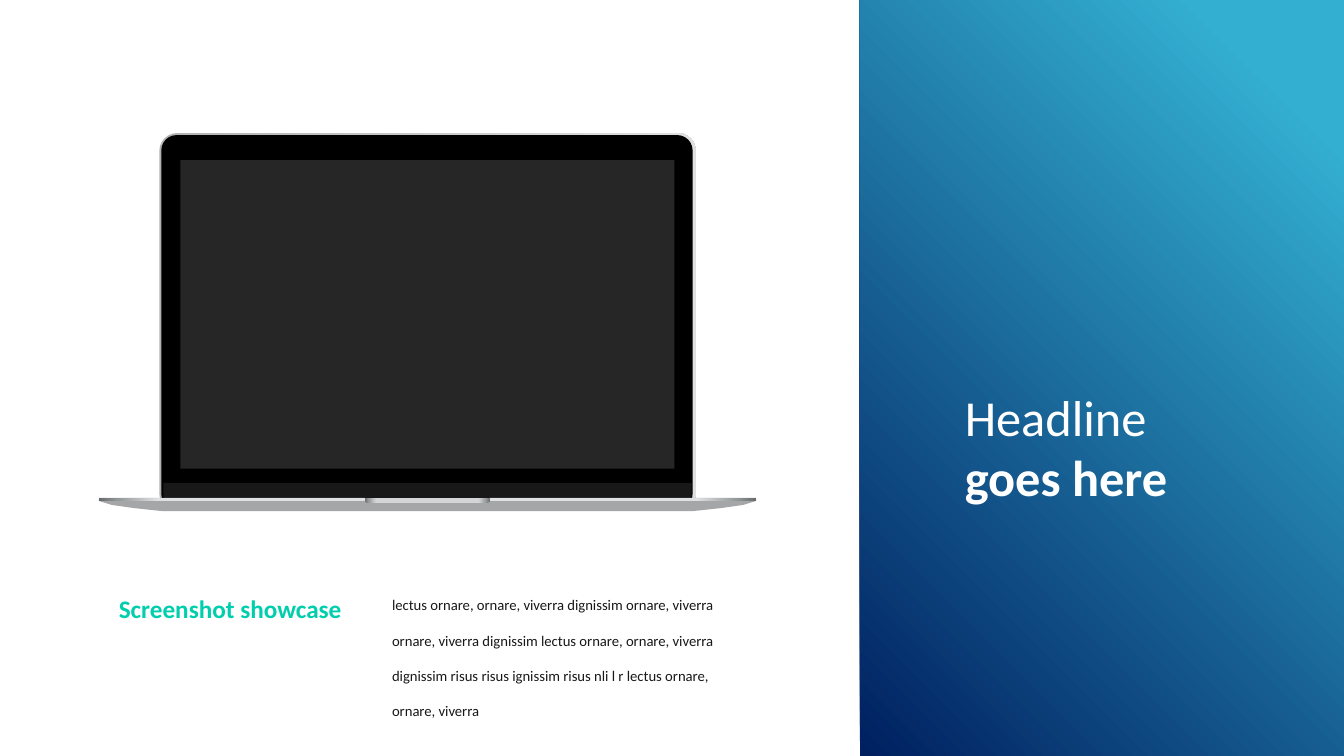
"""Build a laptop showcase slide with a gradient headline panel."""
from dataclasses import dataclass

from lxml.etree import SubElement
from pptx import Presentation
from pptx.dml.color import RGBColor
from pptx.enum.shapes import MSO_SHAPE as SHAPE
from pptx.enum.text import MSO_AUTO_SIZE as AUTO
from pptx.oxml.ns import qn
from pptx.util import Inches, Pt


@dataclass(frozen=True)
class Theme:
    font: str = "Calibri"
    headline_size: float = 36
    title_size: float = 18
    body_size: float = 10.5
    white: str = "FFFFFF"
    accent: str = "00CEAD"
    ink: str = "181818"
    bezel: str = "000000"
    screen: str = "262626"
    base: str = "A5A6A8"
    panel: tuple = ((12, "33AFD2"), (100, "002060"))
    lid: tuple = ((0, "B0B2B4"), (100, "DFE0E1"))


THEME = Theme()
LAPTOP_CENTER = 4.24


def metal(shine):
    """Return symmetric metal gradient stops around a shine colour."""
    edge = ((0, "686B6C"), (3, "96999A"), (9, shine))
    return edge + tuple((100 - pos, color) for pos, color in reversed(edge))


def set_gradient(sp, stops, corner=False):
    """Fill left to right, or outwards from the top right corner."""
    sp.fill.gradient()
    grad = sp._element.spPr.find(qn("a:gradFill"))
    for child in list(grad):
        grad.remove(child)
    stop_list = SubElement(grad, qn("a:gsLst"))
    for pos, color in stops:
        stop = SubElement(stop_list, qn("a:gs"), pos=str(pos * 1000))
        SubElement(stop, qn("a:srgbClr"), val=color)
    if corner:
        path = SubElement(grad, qn("a:path"), path="circle")
        SubElement(path, qn("a:fillToRect"), l="100000", b="100000")
    else:
        SubElement(grad, qn("a:lin"), ang="0", scaled="0")


def paint(sp, fill, corner=False):
    """Apply a plain colour or gradient stops, without line or shadow."""
    if isinstance(fill, str):
        sp.fill.solid()
        sp.fill.fore_color.rgb = RGBColor.from_string(fill)
    else:
        set_gradient(sp, fill, corner)
    sp.line.fill.background()
    sp.shadow.inherit = False


def add_block(shapes, kind, box, fill, adjustments=(), corner=False):
    """Add a painted preset shape."""
    sp = shapes.add_shape(kind, *map(Inches, box))
    for i, value in enumerate(adjustments):
        sp.adjustments[i] = value
    paint(sp, fill, corner)


def add_mirrored(shapes, left_half, fill):
    """Add an outline from its left half, mirrored about the laptop centre."""
    right_half = [(2 * LAPTOP_CENTER - x, y) for x, y in reversed(left_half)]
    points = [(Inches(x), Inches(y)) for x, y in left_half + right_half]
    builder = shapes.build_freeform(*points[0])
    builder.add_line_segments(points[1:], close=True)
    paint(builder.convert_to_shape(), fill)


def add_text(shapes, box, lines, size, color, spacing=None):
    """Add a text box from (text, bold) lines."""
    tf = shapes.add_textbox(*map(Inches, box)).text_frame
    tf.word_wrap = True
    tf.auto_size = AUTO.SHAPE_TO_FIT_TEXT
    tf.text = "\n".join(text for text, _ in lines)
    for p, (_, bold) in zip(tf.paragraphs, lines):
        p.line_spacing = spacing
        font = p.runs[0].font
        font.name, font.size, font.bold = THEME.font, Pt(size), bold
        font.color.rgb = RGBColor.from_string(color)


def add_laptop(slide):
    """Add the laptop as a group of lid, screen and base parts."""
    shapes = slide.shapes.add_group_shape().shapes
    add_block(shapes, SHAPE.ROUNDED_RECTANGLE, (1.58, 1.32, 5.32, 3.75), THEME.lid, (0.047,))
    add_block(shapes, SHAPE.ROUNDED_RECTANGLE, (1.6, 1.34, 5.27, 3.71), THEME.bezel, (0.041,))
    add_block(shapes, SHAPE.ROUND_2_SAME_RECTANGLE, (1.62, 4.79, 5.24, 0.24), THEME.ink, (0, 0.5))
    add_block(shapes, SHAPE.RECTANGLE, (1.79, 1.59, 4.9, 3.06), THEME.screen)
    add_mirrored(shapes, [
        (3.69, 4.97), (3.62, 4.94), (0.98, 4.94), (0.98, 4.97), (1.11, 5.01),
        (1.32, 5.04), (1.6, 5.07), (1.79, 5.07)], THEME.base)
    add_mirrored(shapes, [
        (3.65, 4.96), (3.62, 4.94), (0.98, 4.94), (0.98, 4.97)], metal("DFE0E1"))
    add_mirrored(shapes, [
        (3.62, 4.94), (3.62, 4.97), (3.65, 4.99), (3.69, 4.99)], metal("D3D5D6"))


def main():
    """Build and save the slide."""
    prs = Presentation()
    prs.slide_width, prs.slide_height = Inches(13.33), Inches(7.5)
    slide = prs.slides.add_slide(prs.slide_layouts[6])
    shapes = slide.shapes
    add_block(shapes, SHAPE.RECTANGLE, (8.53, 0, 4.8, 7.5), THEME.panel, corner=True)
    add_text(shapes, (9.47, 3.78, 2.88, 1.31), [("Headline", False), ("goes here", True)],
             THEME.headline_size, THEME.white)
    add_laptop(slide)
    body = ("lectus ornare, ornare, viverra dignissim ornare, viverra ornare, viverra "
            "dignissim lectus ornare, ornare, viverra dignissim risus risus ignissim "
            "risus nli l r lectus ornare, ornare, viverra")
    add_text(shapes, (3.79, 5.69, 3.8, 1.12), [(body, False)],
             THEME.body_size, THEME.ink, spacing=2.0)
    add_text(shapes, (1.08, 5.84, 2.85, 0.4), [("Screenshot showcase", True)],
             THEME.title_size, THEME.accent)
    prs.save("out.pptx")


if __name__ == "__main__":
    main()
